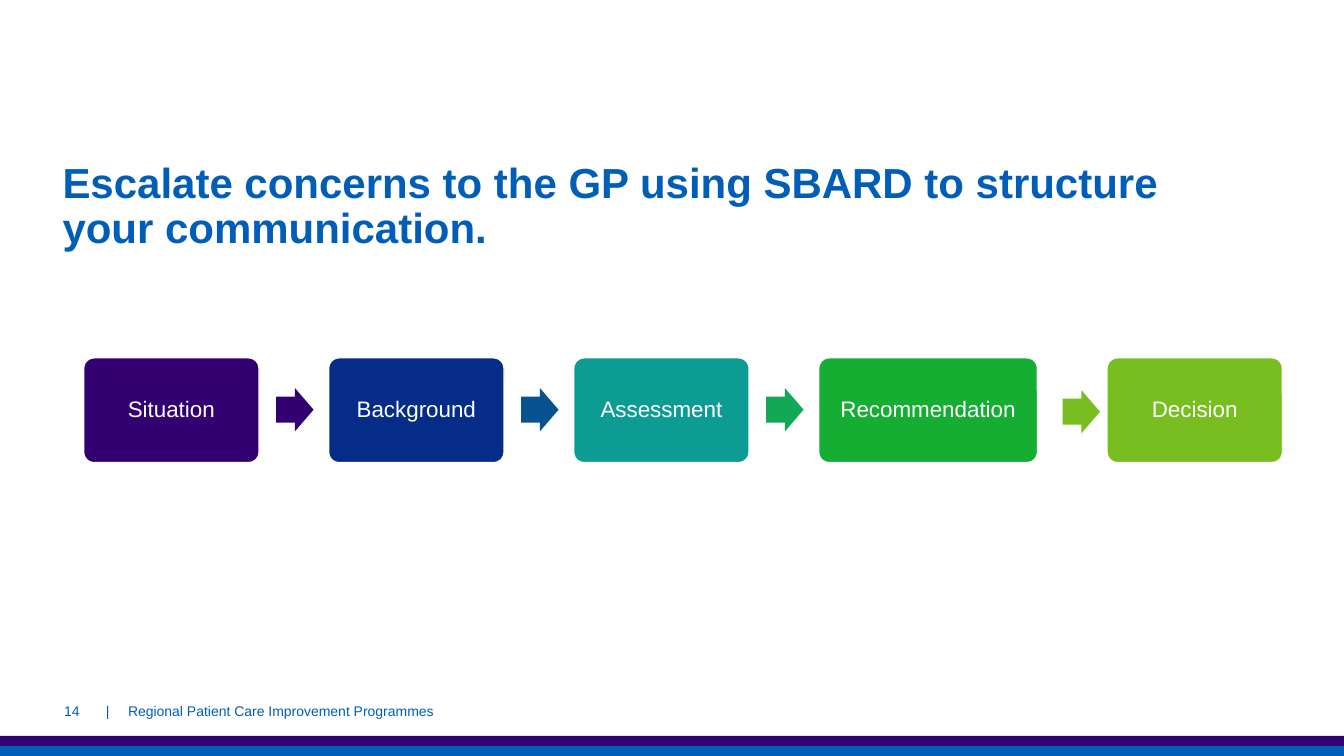
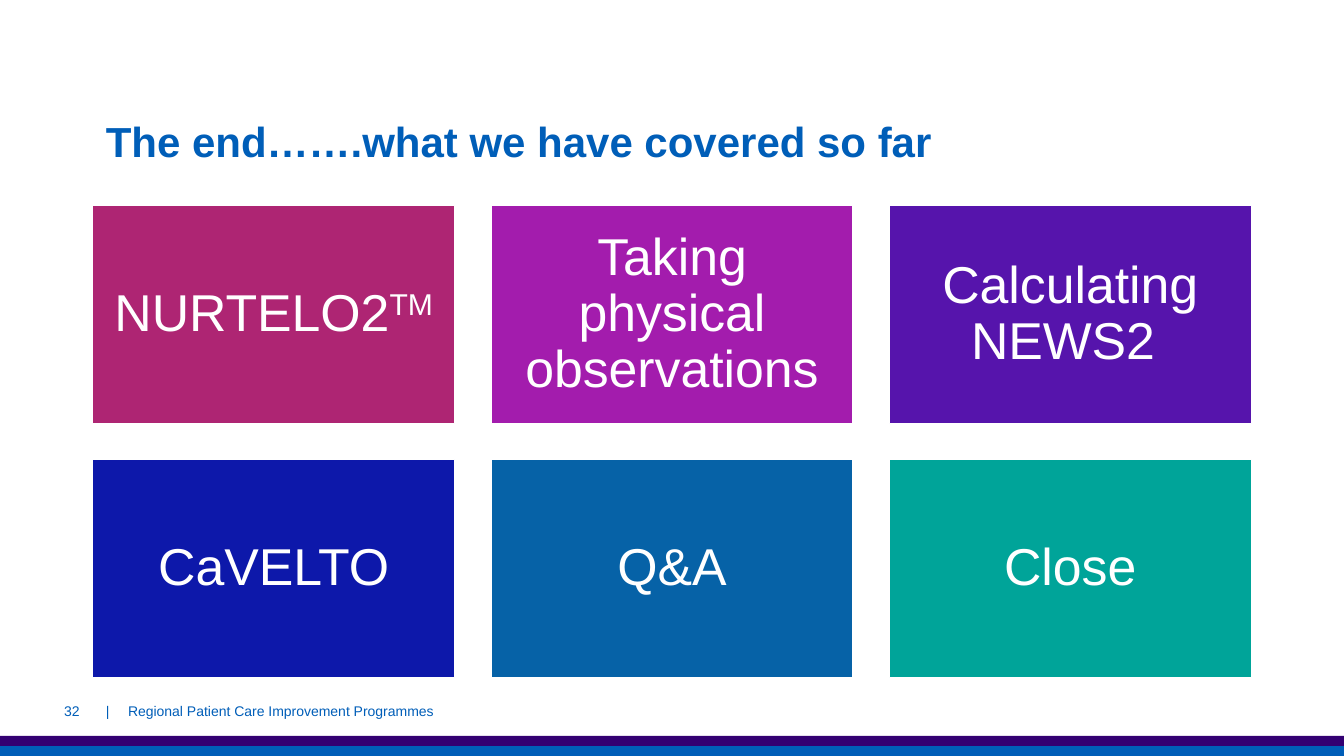
import pptx
import pptx.dml.color
import pptx.enum.shapes
import pptx.enum.text
import pptx.oxml
import pptx.oxml.ns
import pptx.util
from pptx.util import Inches

FONT = "Arial"
BLUE, PURPLE, WHITE = "005EB8", "330072", "FFFFFF"
FOOTER = "|\tRegional Patient Care Improvement Programmes"
BANDS = [(7.4, BLUE), (7.3, PURPLE)]  # top, colour

SBARD_TITLE = "Escalate concerns to the GP using SBARD to structure your communication."
STEPS = [  # label, colour, width
    ("Situation", PURPLE, 1.74),
    ("Background", "052D88", 1.74),
    ("Assessment", "0C9C94", 1.74),
    ("Recommendation", "15AE33", 2.17),
    ("Decision", "78BE20", 1.74),
]
ARROWS = [  # colour, distance from the step before, top
    (PURPLE, 0.17, 3.85),
    ("07528F", 0.17, 3.85),
    ("12A855", 0.17, 3.85),
    ("78BE20", 0.25, 3.87),
]
STEP_LEFT, STEP_TOP, STEP_HEIGHT, STEP_GAP = 0.83, 3.55, 1.04, 0.69

END_TITLE = "The end…….what we have covered so far"
TOPICS = [  # label, superscript, colour
    ("NURTELO2", "TM", "AE2573"),
    ("Taking physical observations", "", "A31CAD"),
    ("Calculating NEWS2 ", "", "5614AC"),
    ("CaVELTO", "", "0D18AA"),
    ("Q&A", "", "0662A7"),
    ("Close", "", "00A499"),
]
TILE_LEFT, TILE_TOP, TILE_WIDTH, TILE_HEIGHT = 0.92, 2.04, 3.59, 2.16
TILE_GAP, TILE_COLUMNS = 0.36, 3

ALIGN = pptx.enum.text.PP_ALIGN
ANCHOR = pptx.enum.text.MSO_ANCHOR
SHAPE = pptx.enum.shapes.MSO_SHAPE
qn = pptx.oxml.ns.qn


def rgb(colour):
    return pptx.dml.color.RGBColor.from_string(colour)


def style_run(run, size, colour, bold=False):
    run.font.name = FONT
    run.font.size = pptx.util.Pt(size)
    run.font.bold = bold
    run.font.color.rgb = rgb(colour)


def set_text(shape, text, size, colour, alignment, anchor, insets=(0, 0),
             bold=False, line_spacing=None):
    """Write one paragraph; insets are horizontal and vertical, in inches."""
    frame = shape.text_frame
    frame.text = text
    frame.word_wrap = True
    frame.auto_size = pptx.enum.text.MSO_AUTO_SIZE.NONE
    frame.vertical_anchor = anchor
    frame.margin_left = frame.margin_right = Inches(insets[0])
    frame.margin_top = frame.margin_bottom = Inches(insets[1])
    paragraph = frame.paragraphs[0]
    paragraph.alignment = alignment
    paragraph.line_spacing = line_spacing
    for run in paragraph.runs:
        style_run(run, size, colour, bold)


def add_filled(slide, kind, left, top, width, height, colour, outlined=False):
    shape = slide.shapes.add_shape(
        kind, Inches(left), Inches(top), Inches(width), Inches(height))
    shape.shadow.inherit = False
    shape.fill.solid()
    shape.fill.fore_color.rgb = rgb(colour)
    if outlined:
        shape.line.color.rgb = rgb(WHITE)
        shape.line.width = pptx.util.Pt(1)
    else:
        shape.line.fill.background()
    return shape


def add_box(slide, kind, left, top, width, height, colour, label, size, inset):
    box = add_filled(slide, kind, left, top, width, height, colour, outlined=True)
    set_text(box, label, size, WHITE, ALIGN.CENTER, ANCHOR.MIDDLE,
             (inset, inset), line_spacing=0.9)
    return box


def add_bands(slide):
    """Draw the bottom bands and move them to the layout all slides share."""
    for top, colour in BANDS:
        band = add_filled(slide, SHAPE.RECTANGLE, 0, top, 13.33, 0.1, colour)
        slide.slide_layout.shapes.element.append(band.element)


def add_footer(slide, number):
    footer = slide.shapes.add_textbox(Inches(1.05), Inches(6.85), Inches(4.5), Inches(0.4))
    set_text(footer, FOOTER, 10, BLUE, ALIGN.LEFT, ANCHOR.MIDDLE, (0, 0.05))
    properties = next(footer.element.iter(qn("a:pPr")))
    tabs = pptx.oxml.parse_xml(
        f'<a:tabLst {pptx.oxml.ns.nsdecls("a")}>'
        f'<a:tab pos="{Inches(0.22)}" algn="l"/></a:tabLst>')
    properties.append(tabs)
    page = slide.shapes.add_textbox(Inches(0.13), Inches(6.85), Inches(0.76), Inches(0.4))
    set_text(page, str(number), 10, BLUE, ALIGN.RIGHT, ANCHOR.MIDDLE, (0.1, 0.05))


def add_slide(presentation, title_text, left, top, height, number):
    slide = presentation.slides.add_slide(presentation.slide_layouts[5])
    title = slide.shapes.title
    title.left, title.top = Inches(left), Inches(top)
    title.width, title.height = Inches(11.76), Inches(height)
    set_text(title, title_text, 30, BLUE, ALIGN.LEFT, ANCHOR.TOP,
             bold=True, line_spacing=0.9)
    add_footer(slide, number)
    return slide


def add_steps(slide):
    left = STEP_LEFT
    for index, (label, colour, width) in enumerate(STEPS):
        box = add_box(slide, SHAPE.ROUNDED_RECTANGLE, left, STEP_TOP, width,
                      STEP_HEIGHT, colour, label, 16, 0.1)
        box.adjustments[0] = 0.1
        right = left + width
        if index < len(ARROWS):
            arrow_colour, distance, top = ARROWS[index]
            arrow = add_filled(slide, SHAPE.RIGHT_ARROW, right + distance, top,
                               0.37, 0.43, arrow_colour)
            arrow.adjustments[0] = 0.6
            arrow.adjustments[1] = 0.5
        left = right + STEP_GAP


def add_topics(slide):
    for index, (label, superscript, colour) in enumerate(TOPICS):
        row, column = divmod(index, TILE_COLUMNS)
        tile = add_box(slide, SHAPE.RECTANGLE,
                       TILE_LEFT + column * (TILE_WIDTH + TILE_GAP),
                       TILE_TOP + row * (TILE_HEIGHT + TILE_GAP),
                       TILE_WIDTH, TILE_HEIGHT, colour, label, 37, 0.15)
        if superscript:
            run = tile.text_frame.paragraphs[0].add_run()
            run.text = superscript
            style_run(run, 37, WHITE)
            list(tile.element.iter(qn("a:rPr")))[-1].set("baseline", "30000")


def main():
    presentation = pptx.Presentation()
    presentation.slide_width = Inches(13.33)
    presentation.slide_height = Inches(7.5)

    sbard = add_slide(presentation, SBARD_TITLE, 0.62, 1.61, 1.12, 14)
    add_bands(sbard)
    add_steps(sbard)

    ending = add_slide(presentation, END_TITLE, 1.05, 1.2, 0.98, 32)
    add_topics(ending)

    presentation.save("out.pptx")


if __name__ == "__main__":
    main()
